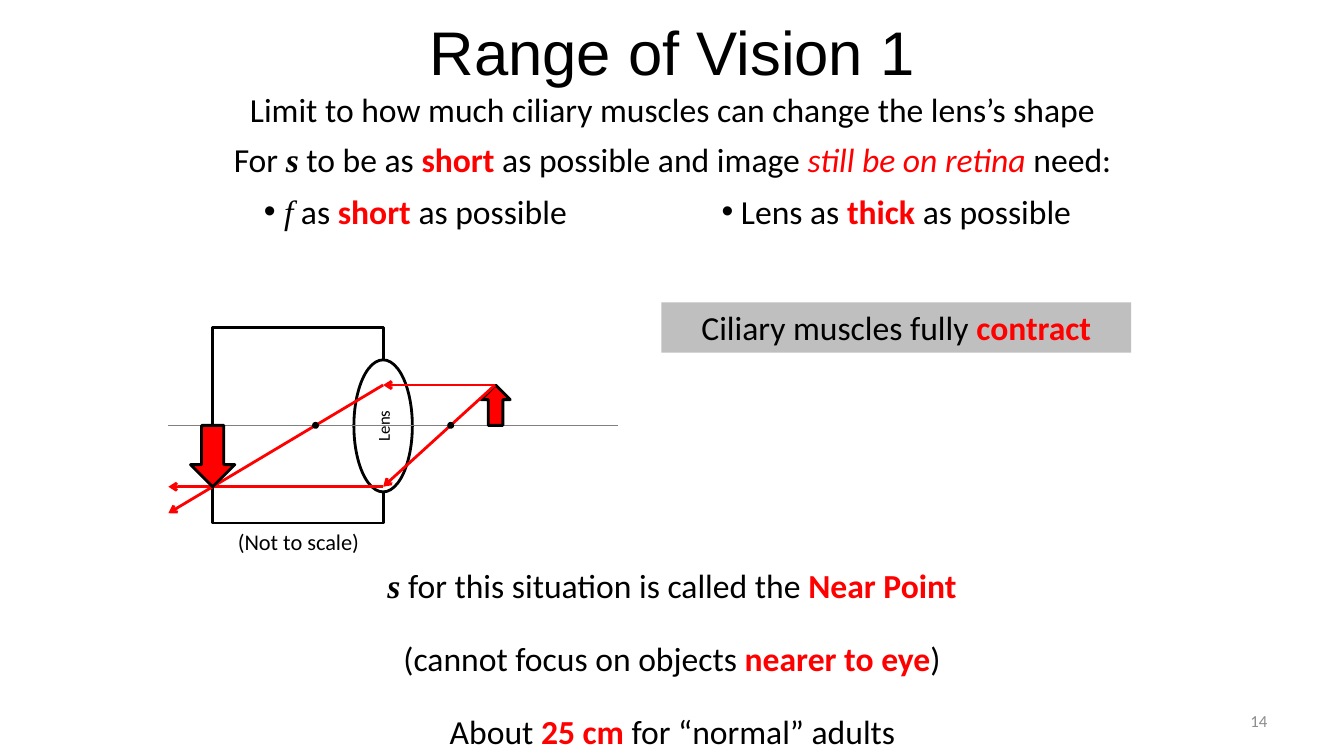
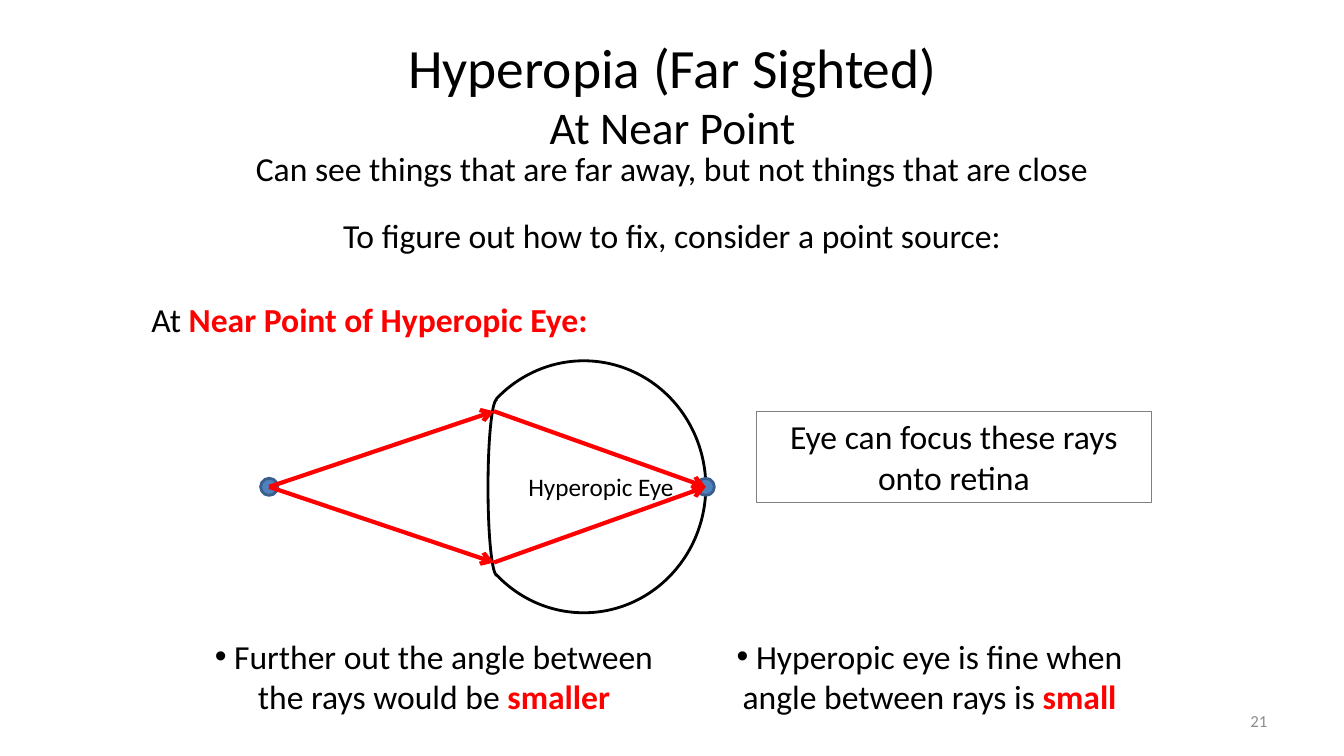
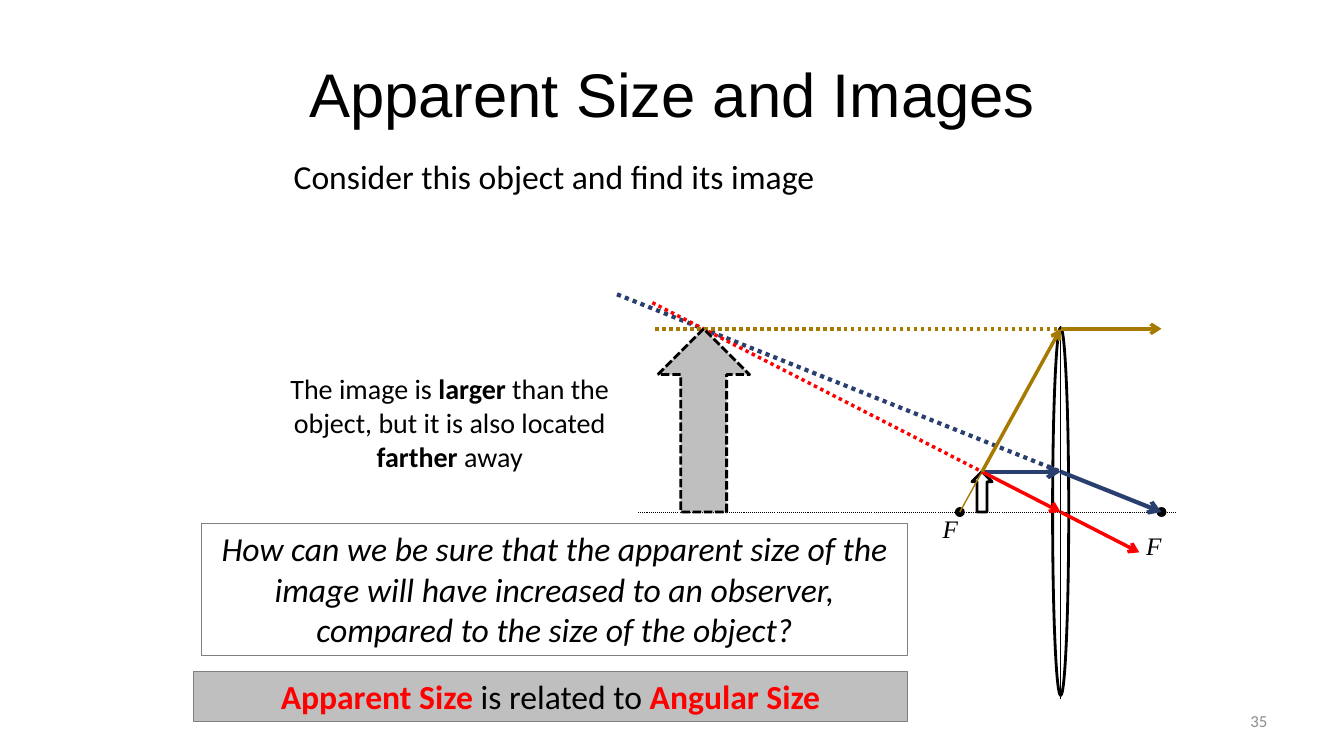
from pptx import Presentation
from pptx.dml.color import RGBColor
from pptx.enum.dml import MSO_LINE
from pptx.enum.shapes import MSO_CONNECTOR, MSO_SHAPE
from pptx.enum.text import MSO_ANCHOR, MSO_AUTO_SIZE, PP_ALIGN
from pptx.oxml.ns import qn
from pptx.util import Inches, Pt
from lxml import etree

RECT, OVAL, ARC = MSO_SHAPE.RECTANGLE, MSO_SHAPE.OVAL, MSO_SHAPE.ARC
UP, DOWN = MSO_SHAPE.UP_ARROW, MSO_SHAPE.DOWN_ARROW
STRAIGHT = MSO_CONNECTOR.STRAIGHT
DOTS, DASHES = MSO_LINE.ROUND_DOT, MSO_LINE.SQUARE_DOT
TOP, MIDDLE = MSO_ANCHOR.TOP, MSO_ANCHOR.MIDDLE
LEFT, CENTER, RIGHT = PP_ALIGN.LEFT, PP_ALIGN.CENTER, PP_ALIGN.RIGHT
FIXED = MSO_AUTO_SIZE.NONE
TITLE_AND_LISTS, TITLE_ONLY = 3, 5

COLORS = {
    "black": "000000", "white": "FFFFFF", "red": "FF0000", "panel": "BFBFBF",
    "border": "808080", "number": "8C8C8C", "dot": "4F81BD",
    "dot_edge": "3A5F8C", "navy": "293F6F", "gold": "A67A00",
}
SANS, SERIF, HEADING = "Calibri", "Times New Roman", "Arial"
BASE = {"name": SANS, "bold": False, "italic": False, "color": "black"}
STYLES = {
    "plain": {},
    "key": {"bold": True, "color": "red"},
    "bold": {"bold": True},
    "italic": {"italic": True},
    "red italic": {"italic": True, "color": "red"},
    "symbol": {"name": SERIF, "italic": True},
    "bold symbol": {"name": SERIF, "italic": True, "bold": True},
    "heading": {"name": HEADING},
    "number": {"color": "number"},
}
TITLE_BOX = (0.67, 0.3, 12, 1.25)


def rgb(name):
    return RGBColor.from_string(COLORS[name])


def inches(*lengths):
    return [Inches(v) for v in lengths]


def write(tf, runs, size=24, align=CENTER, anchor=TOP):
    """Fill one paragraph with (text, style[, size]) runs; returns it."""
    for name, value in {"word_wrap": True, "auto_size": FIXED,
                        "vertical_anchor": anchor}.items():
        setattr(tf, name, value)
    p = tf.paragraphs[0]
    p.alignment = align
    for i, (text, style, *own_size) in enumerate(runs):
        if own_size and i:
            p.add_line_break()
        r = p.add_run()
        r.text = text
        look = {**BASE, **STYLES[style]}
        r.font.color.rgb = rgb(look.pop("color"))
        r.font.size = Pt(own_size[0] if own_size else size)
        for name, value in look.items():
            setattr(r.font, name, value)
    return p


def add_text(s, box, runs, **layout):
    write(s.shapes.add_textbox(*inches(*box)).text_frame, runs, **layout)


def add_shape(s, kind, box, fill=None, line="black", width=2, dash=None):
    sp = s.shapes.add_shape(kind, *inches(*box))
    sp.shadow.inherit = False
    if fill:
        sp.fill.solid()
        sp.fill.fore_color.rgb = rgb(fill)
    else:
        sp.fill.background()
    if line:
        sp.line.color.rgb = rgb(line)
        sp.line.width = Pt(width)
        if dash:
            sp.line.dash_style = dash
    else:
        sp.line.fill.background()
    return sp


def add_panel(s, box, runs, fill=None, line="border"):
    write(add_shape(s, RECT, box, fill, line, 0.75).text_frame, runs)


def add_dot(s, center, size, fill="black", line="black"):
    x, y = center
    add_shape(s, OVAL, (x - size / 2, y - size / 2, size, size), fill, line)


def add_line(s, start, end, color, width, dash=None, arrow=False):
    c = s.shapes.add_connector(STRAIGHT, *inches(*start, *end))
    c.line.color.rgb = rgb(color)
    c.line.width = Pt(width)
    if dash:
        c.line.dash_style = dash
    if arrow:
        etree.SubElement(c.line._get_or_add_ln(), qn("a:tailEnd"), type="arrow")
    etree.SubElement(c._element.spPr, qn("a:effectLst"))


def add_list(holder, box, runs):
    """Place a list placeholder whose bullet is centred along with its text."""
    holder.left, holder.top, holder.width, holder.height = inches(*box)
    p = write(holder.text_frame, runs)
    p.space_before = Pt(0)
    pPr = p._p.get_or_add_pPr()
    for name in ("marL", "indent"):
        pPr.set(name, "0")


def new_slide(prs, layout, number, title, box=TITLE_BOX):
    s = prs.slides.add_slide(prs.slide_layouts[layout])
    t = s.shapes.title
    t.left, t.top, t.width, t.height = inches(*box)
    write(t.text_frame, title, size=44, anchor=MIDDLE)
    add_text(s, (9.56, 6.95, 3.11, 0.4), [(number, "number")],
             size=12, align=RIGHT, anchor=MIDDLE)
    return s


def image_of(focal, distance, height):
    """Distance and height of a thin lens image (negative: object's side)."""
    d = focal * distance / (distance - focal)
    return d, height * d / distance


def draw_eye_camera(s, left, top, width, height):
    """Boxy eye: light comes from the object at the right."""
    axis, lens = top + height / 2, left + 2.13
    focal, distance, size = 0.67, 1.11, 0.4
    depth, drop = image_of(focal, distance, size)
    tip = (lens + distance, axis - size)
    entry, exit_ = (lens, axis - size), (lens, axis + drop)
    add_shape(s, RECT, (lens - depth, top, depth, height))
    sp = add_shape(s, OVAL, (lens - 0.29, axis - 0.65, 0.58, 1.31), "white")
    p_box = sp.text_frame
    write(p_box, [("Lens", "plain")], size=12, anchor=MIDDLE)
    p_box._txBody.bodyPr.set("vert", "vert270")
    add_line(s, (left, axis), (left + width, axis), "border", 0.75)
    add_shape(s, UP, (tip[0] - 0.14, tip[1], 0.29, size), "red")
    past_focus = axis + size * (lens - focal - left) / focal
    for start, end in ((tip, entry), (entry, (left, past_focus)),
                       (tip, exit_), (exit_, (left, axis + drop))):
        add_line(s, start, end, "red", 2, arrow=True)
    add_shape(s, DOWN, (lens - depth - 0.22, axis, 0.44, drop), "red")
    for x in (lens - focal, lens + focal):
        add_dot(s, (x, axis), 0.04)
    add_text(s, (left + 0.38, top + height, 1.82, 0.37),
             [("(Not to scale)", "plain")], size=16)


def draw_hyperopic_eye(s, left, top, width, height):
    """Round eye at the right end of the box, point source at the left."""
    axis, right = top + height / 2, left + width
    cornea = right - 2.1
    source, focus = (left, axis), (right, axis)
    add_dot(s, source, 0.17, "dot", "dot_edge")
    front = (cornea - 0.06, axis - 0.87, 0.18, 1.75)
    ball = (right - 2.42, top, 2.42, height)
    for box, angles in ((front, (90, 270)), (ball, (225, 135))):
        sp = add_shape(s, ARC, box)
        for i, degrees in enumerate(angles):
            sp.adjustments[i] = degrees * 0.6
    write(sp.text_frame, [("Hyperopic Eye", "plain")], size=18, anchor=MIDDLE)
    add_dot(s, focus, 0.17, "dot", "dot_edge")
    for rise in (-0.75, 0.75):
        entry = (cornea, axis + rise)
        add_line(s, source, entry, "red", 3, arrow=True)
        add_line(s, entry, focus, "red", 3, arrow=True)


def draw_magnifier(s, left, top, width, height):
    """Object inside the focal length, with its enlarged virtual image."""
    lens, axis = left + 4.4, top + 2.16
    focal, distance, size = 1, 0.78, 0.4
    depth, tall = (-v for v in image_of(focal, distance, size))
    tip = (lens - distance, axis - size)
    center, level, high = ((lens, axis - h) for h in (0, size, tall))
    half = height - 2.16

    def back(x, point, slope):
        return x, point[1] - (lens - x) * slope

    for x, label_x, label_y in ((lens - focal, -0.27, -0.04),
                                (lens + focal, -0.25, 0.13)):
        add_dot(s, (x, axis), 0.07)
        add_text(s, (x + label_x, axis + label_y, 0.25, 0.4),
                 [("F", "symbol")], size=18, align=LEFT)
    add_line(s, (left + 0.21, axis), (left + width, axis), "black", 0.75, DOTS)
    add_shape(s, UP, (tip[0] - 0.1, tip[1], 0.2, size))
    add_shape(s, OVAL, (lens - 0.08, axis - 1.83, 0.16, 3.65))
    add_line(s, (lens, axis - half), (lens, axis + half), "black", 0.75)
    add_line(s, (lens - focal, axis), tip, "gold", 1)
    slope = size / distance
    rays = (
        ("navy", 3, level, (lens + focal, axis),
         back(left, level, size / focal), level),
        ("red", 2.5, center, (lens + distance, axis + size),
         back(left + 0.35, center, slope), tip),
        ("gold", 2.5, high, (lens + focal, high[1]),
         back(left + 0.38, high, 0), high),
    )
    for color, weight, hit, out, far, near in rays:
        add_line(s, tip, hit, color, weight, arrow=True)
        add_line(s, hit, out, color, weight, arrow=True)
        add_line(s, far, near, color, weight, DOTS)
    add_shape(s, UP, (lens - depth - 0.45, axis - tall, 0.91, tall),
              "panel", dash=DASHES)


def near_point_slide(prs):
    s = new_slide(prs, TITLE_AND_LISTS, "14",
                  [("Range of Vision 1", "heading")], (2.17, 0, 9, 1))
    lines = (
        ((1.84, 0.83, 9.66, 0.51),
         [("Limit to how much ciliary muscles can change the lens’s shape", "plain")]),
        ((1.67, 1.33, 10, 0.5),
         [("For ", "plain"), ("s", "bold symbol"), (" to be as ", "plain"),
          ("short ", "key"), ("as possible and image ", "plain"),
          ("still be on retina", "red italic"), (" need:", "plain")]),
        ((3.33, 5.56, 6.67, 0.5),
         [("s", "bold symbol"), (" for this situation is called the ", "plain"),
          ("Near Point", "key")]),
        ((2.83, 6.28, 7.67, 0.5),
         [("(cannot focus on objects ", "plain"), ("nearer to eye", "key"),
          (")", "plain")]),
        ((4.03, 7, 5.28, 0.5),
         [("About ", "plain"), ("25 cm ", "key"),
          ("for “normal” adults", "plain")]),
    )
    for box, runs in lines:
        add_text(s, box, runs)
    add_list(s.placeholders[1], (2.12, 1.84, 4, 0.5),
             [(" f", "symbol"), (" as ", "plain"), ("short ", "key"),
              ("as possible", "plain")])
    add_list(s.placeholders[2], (6.65, 1.84, 4.48, 0.5),
             [(" Lens as ", "plain"), ("thick ", "key"),
              ("as possible", "plain")])
    draw_eye_camera(s, 1.67, 3.25, 4.46, 1.94)
    add_panel(s, (6.56, 3, 4.66, 0.5),
              [("Ciliary muscles fully ", "plain"), ("contract", "key")],
              "panel", None)


def hyperopia_slide(prs):
    s = new_slide(prs, TITLE_AND_LISTS, "21",
                  [("Hyperopia (Far Sighted)", "plain", 39.6),
                   ("At Near Point", "plain", 32.4)])
    lines = (
        ((1.83, 1.42, 9.67, 0.51),
         [("Can see things that are far away, but not things that are close", "plain")]),
        ((2.08, 2.08, 9.17, 0.51),
         [("To figure out how to fix, consider a point source:", "plain")]),
        ((1.33, 2.92, 4.67, 0.5),
         [("At ", "plain"), ("Near Point of Hyperopic Eye:", "key")]),
    )
    for box, runs in lines:
        add_text(s, box, runs)
    draw_hyperopic_eye(s, 2.67, 3.58, 4.33, 2.5)
    add_panel(s, (7.5, 4.08, 3.92, 0.91),
              [("Eye can focus these rays onto retina", "plain")])
    add_list(s.placeholders[1], (1.82, 6.26, 4.97, 0.91),
             [(" Further out the angle between the rays would be ", "plain"),
              ("smaller", "key")])
    add_list(s.placeholders[2], (6.93, 6.26, 4.58, 0.91),
             [(" Hyperopic eye is fine when angle between rays is ", "plain"),
              ("small", "key")])


def apparent_size_slide(prs):
    s = new_slide(prs, TITLE_ONLY, "35",
                  [("Apparent Size and Images", "heading")])
    draw_magnifier(s, 6.12, 2.92, 5.55, 4.01)
    add_text(s, (2.08, 1.5, 6.83, 0.51),
             [("Consider this object and find its image", "plain")])
    add_text(s, (2.67, 3.64, 3.58, 1.11),
             [("The image is ", "plain"), ("larger", "bold"),
              (" than the object, but it is also located ", "plain"),
              ("farther", "bold"), (" away", "plain")], size=20)
    add_panel(s, (2, 5.19, 7, 1.31),
              [("How can we be sure that the apparent size of the image will "
                "have increased to an observer, compared to the size of the "
                "object?", "italic")])
    add_panel(s, (1.92, 6.66, 7.08, 0.5),
              [("Apparent Size", "key"), (" is related to ", "plain"),
               ("Angular Size", "key")], "panel")


def main():
    prs = Presentation()
    prs.slide_width, prs.slide_height = inches(13.33, 7.5)
    near_point_slide(prs)
    hyperopia_slide(prs)
    apparent_size_slide(prs)
    prs.save("out.pptx")


if __name__ == "__main__":
    main()
